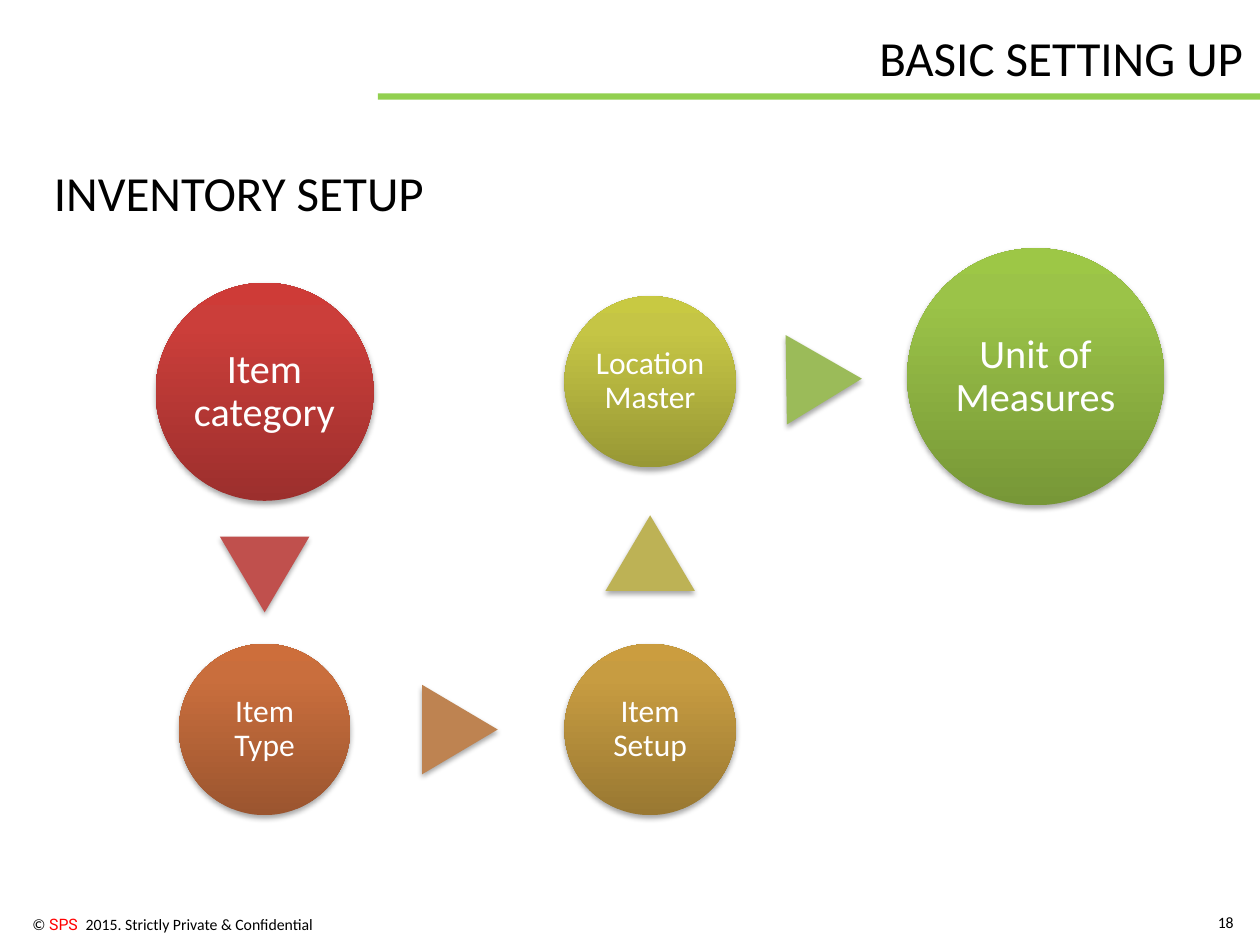
from copy import deepcopy

from pptx import Presentation
from pptx.dml.color import RGBColor
from pptx.enum.shapes import MSO_SHAPE
from pptx.enum.text import MSO_ANCHOR, PP_ALIGN
from pptx.oxml import parse_xml
from pptx.oxml.ns import nsdecls, qn
from pptx.util import Inches, Pt

BLACK = RGBColor(0x00, 0x00, 0x00)
WHITE = RGBColor(0xFF, 0xFF, 0xFF)
RED = RGBColor(0xFF, 0x00, 0x00)
GREEN = RGBColor(0x92, 0xD0, 0x50)

COLUMNS = [2.1 + 3.06 * i for i in range(3)]
SHADOW = (
    f'<a:outerShdw {nsdecls("a")} blurRad="40000" dist="23000" dir="5400000" rotWithShape="0">'
    '<a:srgbClr val="000000"><a:alpha val="35000"/></a:srgbClr></a:outerShdw>'
)


def add_centered(kind, x, y, width, height):
    """Add a borderless shape with a soft shadow, centred on (x, y)."""
    sp = s.shapes.add_shape(kind, Inches(x - width / 2), Inches(y - height / 2),
                            Inches(width), Inches(height))
    sp.line.fill.background()
    sp.shadow.inherit = False
    sp._element.spPr.find(qn("a:effectLst")).append(parse_xml(SHADOW))
    return sp


def add_text(box, runs, size, align=PP_ALIGN.LEFT, wrap=True, anchor=MSO_ANCHOR.TOP):
    """Add a text box; runs holds (text, font name, colour)."""
    tf = s.shapes.add_textbox(*map(Inches, box)).text_frame
    tf.word_wrap = wrap
    tf.vertical_anchor = anchor
    p = tf.paragraphs[0]
    p.alignment = align
    for text, name, color in runs:
        r = p.add_run()
        r.text = text
        r.font.name, r.font.size, r.font.color.rgb = name, Pt(size), color


prs = Presentation()
prs.slide_width, prs.slide_height = Inches(10), Inches(7.5)
s = prs.slides.add_slide(prs.slide_layouts[6])

# Header rule, footer and headings
rule = s.shapes.add_shape(MSO_SHAPE.RECTANGLE, Inches(3), Inches(0.74), Inches(7), Inches(0.05))
rule.fill.solid()
rule.fill.fore_color.rgb = GREEN
rule.line.fill.background()
rule.shadow.inherit = False

add_text((-0.33, 7.21, 2.91, 0.25),
         [("© ", "Calibri", BLACK), ("SPS  ", "Roboto", RED),
          ("2015. Strictly Private & Confidential", "Calibri", BLACK)],
         9, PP_ALIGN.RIGHT)
add_text((9.49, 7.12, 0.4, 0.4), [("18", "Calibri", BLACK)], 9,
         PP_ALIGN.RIGHT, anchor=MSO_ANCHOR.MIDDLE)
add_text((6.88, 0.17, 3.12, 0.57), [("BASIC SETTING UP", "Calibri", BLACK)], 28, wrap=False)
add_text((0.33, 1.24, 3.17, 0.57), [("INVENTORY SETUP", "Calibri", BLACK)], 28, wrap=False)

# Steps: text, column, centre y, diameter, text size, gradient from bottom to top
steps = [
    ("Item category", 0, 3.11, 1.73, 23, ("9C2F2D", "CB3E3A", "CE3B37")),
    ("Item Type", 0, 5.79, 1.36, 18, ("9B552F", "C96E3D", "CD6E3B")),
    ("Item Setup", 1, 5.79, 1.36, 18, ("997832", "C79C41", "CB9D3F")),
    ("Location Master", 1, 3.03, 1.36, 18, ("989835", "C5C545", "C8C942")),
    ("Unit of Measures", 2, 2.99, 2.04, 23, ("779737", "9BC348", "9DC746")),
]
for text, column, y, diameter, size, colors in steps:
    sp = add_centered(MSO_SHAPE.OVAL, COLUMNS[column], y, diameter, diameter)
    sp.fill.gradient()
    sp.fill.gradient_angle = 90
    stops = sp._element.spPr.find(qn("a:gradFill")).find(qn("a:gsLst"))
    stops.append(deepcopy(stops[-1]))
    for stop, position, color in zip(sp.fill.gradient_stops, (0, 0.8, 1), colors):
        stop.position = position
        stop.color.rgb = RGBColor.from_string(color)

    tf = sp.text_frame
    tf.word_wrap = True
    tf.vertical_anchor = MSO_ANCHOR.MIDDLE
    for side in ("left", "top", "right", "bottom"):
        setattr(tf, f"margin_{side}", Inches(0.03))
    p = tf.paragraphs[0]
    p.alignment = PP_ALIGN.CENTER
    p.line_spacing = 0.9
    r = p.add_run()
    r.text = text
    r.font.name, r.font.size, r.font.color.rgb = "Calibri", Pt(size), WHITE

# Arrowheads between the steps: centre x, centre y, rotation, colour
arrows = [
    (COLUMNS[0], 4.56, 180, "C0504D"),
    (3.65, 5.79, 90, "BE8351"),
    (COLUMNS[1], 4.39, 0, "BDB255"),
    (6.54, 3.01, 89.2, "9BBB59"),
]
for x, y, rotation, color in arrows:
    sp = add_centered(MSO_SHAPE.ISOSCELES_TRIANGLE, x, y, 0.71, 0.6)
    sp.rotation = rotation
    sp.fill.solid()
    sp.fill.fore_color.rgb = RGBColor.from_string(color)

prs.save("out.pptx")
